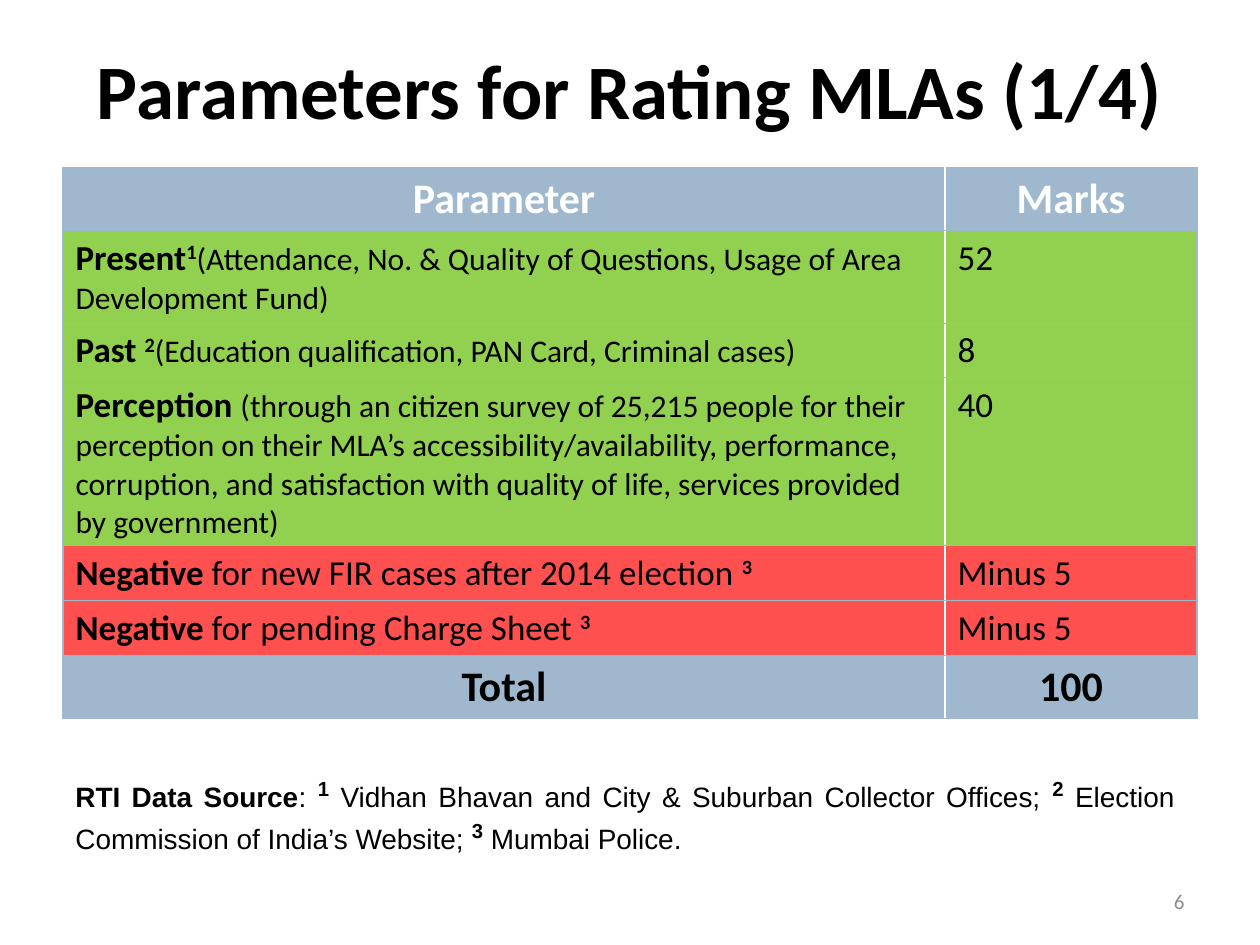
from lxml import etree
from pptx import Presentation
from pptx.dml.color import RGBColor
from pptx.enum.text import MSO_ANCHOR, MSO_AUTO_SIZE, PP_ALIGN
from pptx.oxml.ns import qn
from pptx.util import Inches, Pt

LEFT, CENTER, RIGHT, JUSTIFY = PP_ALIGN.LEFT, PP_ALIGN.CENTER, PP_ALIGN.RIGHT, PP_ALIGN.JUSTIFY
MIDDLE = MSO_ANCHOR.MIDDLE

BLACK = RGBColor(0x00, 0x00, 0x00)
WHITE = RGBColor(0xFF, 0xFF, 0xFF)
GRAY = RGBColor(0x8C, 0x8C, 0x8C)
BLUE = RGBColor(0x9F, 0xB8, 0xCD)
GREEN = RGBColor(0x92, 0xD0, 0x50)
RED = RGBColor(0xFF, 0x50, 0x50)

# Runs are (text, size, style): "b" is bold, "s" is superscript.
TITLE = [("Parameters for Rating MLAs (1/4)", 44, "b")]
COL_WIDTHS = [7, 2]

# Rows are (height, fill, text colour, alignment, parameter runs, marks runs).
ROWS = [
    (0.5, BLUE, WHITE, CENTER, [("Parameter", 24, "b")], [("Marks", 24, "b")]),
    (0.73, GREEN, BLACK, LEFT,
     [("Present", 20, "b"), ("1", 20, "bs"),
      ("(Attendance, No. & Quality of Questions, Usage of Area Development Fund)", 18, "")],
     [("52", 20, "")]),
    (0.43, GREEN, BLACK, LEFT,
     [("Past ", 20, "b"), ("2", 20, "bs"),
      ("(Education qualification, PAN Card, Criminal cases)", 18, "")],
     [("8", 20, "")]),
    (1.33, GREEN, BLACK, LEFT,
     [("Perception ", 20, "b"),
      ("(through an citizen survey of 25,215 people for their perception on their MLA’s "
       "accessibility/availability, performance, corruption, and satisfaction with quality "
       "of life, services provided by government)", 18, "")],
     [("40", 20, "")]),
    (0.43, RED, BLACK, LEFT,
     [("Negative", 20, "b"), (" for new FIR cases after 2014 election ", 20, ""), ("3", 20, "bs")],
     [("Minus 5", 20, "")]),
    (0.43, RED, BLACK, LEFT,
     [("Negative", 20, "b"), (" for pending Charge Sheet ", 20, ""), ("3", 20, "bs")],
     [("Minus 5", 20, "")]),
    (0.5, BLUE, BLACK, CENTER, [("Total", 24, "b")], [("100", 24, "b")]),
]

SOURCES = [
    ("RTI Data Source", 16, "b"), (": ", 16, ""),
    ("1", 20, "bs"), (" Vidhan Bhavan and City & Suburban Collector Offices; ", 16, ""),
    ("2", 20, "bs"), (" Election Commission of India’s Website; ", 16, ""),
    ("3", 20, "bs"), (" Mumbai Police.", 16, ""),
]
PAGE_NUMBER = [("6", 12, "")]


def write_runs(tf, runs, color, align, font="Calibri"):
    p = tf.paragraphs[0]
    p.alignment = align
    for text, size, style in runs:
        r = p.add_run()
        r.text = text
        r.font.name = font
        r.font.size = Pt(size)
        r.font.bold = "b" in style
        r.font.color.rgb = color
        if "s" in style:
            r._r.get_or_add_rPr().set("baseline", "30000")


def add_borders(cell, sides):
    """Draw thin blue lines on the given sides; call before filling the cell."""
    tcPr = cell._tc.get_or_add_tcPr()
    for side in sides:
        ln = etree.SubElement(tcPr, qn(f"a:ln{side}"), w=str(Pt(0.75)))
        fill = etree.SubElement(ln, qn("a:solidFill"))
        etree.SubElement(fill, qn("a:srgbClr"), val=str(BLUE))


def add_text(slide, box, runs, color, align, font="Calibri"):
    tf = slide.shapes.add_textbox(*map(Inches, box)).text_frame
    tf.word_wrap = True
    write_runs(tf, runs, color, align, font)
    return tf


def add_marks_table(slide):
    heights = [row[0] for row in ROWS]
    frame = slide.shapes.add_table(len(ROWS), len(COL_WIDTHS), Inches(0.5), Inches(1.33),
                                   Inches(sum(COL_WIDTHS)), Inches(sum(heights)))
    table = frame.table
    for column, width in zip(table.columns, COL_WIDTHS):
        column.width = Inches(width)
    for row, (height, fill, color, align, *contents) in zip(table.rows, ROWS):
        row.height = Inches(height)
        for cell, runs, sides in zip(row.cells, contents, ("LTB", "RTB")):
            add_borders(cell, sides)
            cell.fill.solid()
            cell.fill.fore_color.rgb = fill
            write_runs(cell.text_frame, runs, color, align)


def main():
    prs = Presentation()
    prs.slide_width, prs.slide_height = Inches(10), Inches(7.5)
    slide = prs.slides.add_slide(prs.slide_layouts.get_by_name("Title Only"))

    title = slide.shapes.title
    title.left, title.top, title.width, title.height = map(Inches, (0.5, 0.08, 9, 1.25))
    title.text_frame.vertical_anchor = MIDDLE
    write_runs(title.text_frame, TITLE, BLACK, CENTER)

    sources = add_text(slide, (0.5, 6.08, 8.92, 0.64), SOURCES, BLACK, JUSTIFY, "Arial")
    sources.auto_size = MSO_AUTO_SIZE.SHAPE_TO_FIT_TEXT
    add_marks_table(slide)
    number = add_text(slide, (7.17, 6.95, 2.33, 0.4), PAGE_NUMBER, GRAY, RIGHT)
    number.vertical_anchor = MIDDLE

    prs.save("out.pptx")


if __name__ == "__main__":
    main()
